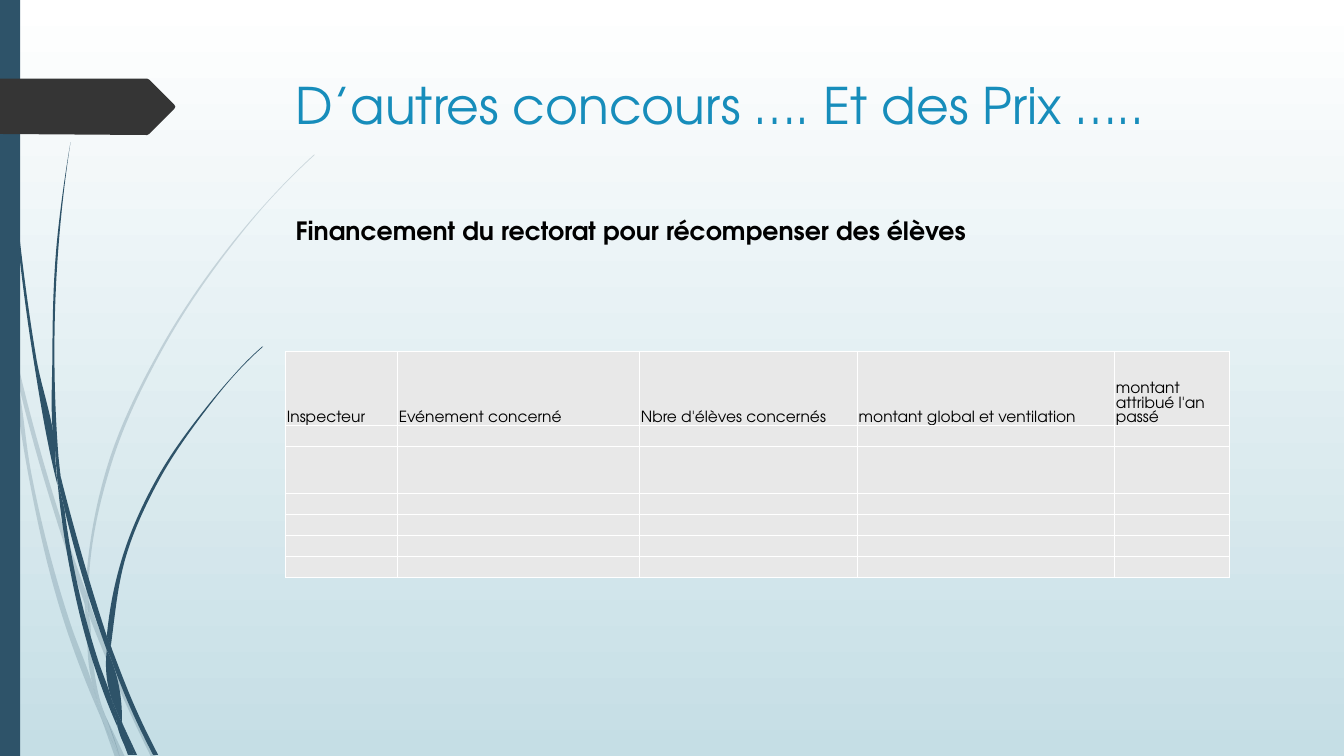
from dataclasses import dataclass

from lxml.etree import SubElement
from pptx import Presentation
from pptx.dml.color import RGBColor
from pptx.enum.shapes import MSO_SHAPE
from pptx.enum.text import MSO_ANCHOR, MSO_AUTO_SIZE, PP_ALIGN
from pptx.oxml.ns import qn
from pptx.util import Cm, Pt


@dataclass(frozen=True)
class Theme:
    font: str = "TeX Gyre Adventor"
    title: str = "178DBB"
    text: str = "000000"
    stem: str = "2E5369"
    arrow: str = "353535"
    cell: str = "E8E8E8"
    border: str = "FFFFFF"
    sky_top: str = "FFFFFF"
    sky_bottom: str = "C5DEE5"
    title_size: int = 36
    subtitle_size: int = 18
    table_size: int = 11


THEME = Theme()
GRID = Cm(2.54) / 100  # outline points are counted in this unit
PALE_ALPHA = 20

# Each blade: the points along one edge, then those back along the other.
PALE_BLADES = [
    ([(0, 282), (9, 322), (11, 350)], [(10, 344), (0, 299)]),
    ([(14, 345), (36, 433), (62, 520), (85, 586)], [(84, 599), (58, 522), (36, 449), (17, 376)]),
    ([(88, 596), (92, 607), (127, 692), (155, 751)], [(150, 751), (123, 694), (88, 610)]),
    ([(105, 711), (124, 751)], [(119, 751)]),
    ([(11, 350), (17, 376), (31, 469), (70, 619), (93, 683), (99, 707), (101, 714)],
     [(92, 693), (65, 621), (28, 470), (11, 350)]),
    ([(84, 599), (88, 610), (91, 646), (103, 706), (105, 711)], [(96, 692), (93, 683), (87, 646)]),
    ([(312, 153), (289, 175), (268, 197), (228, 244), (158, 348), (107, 461), (85, 584)],
     [(88, 596), (88, 584), (110, 462), (160, 349), (229, 245), (268, 198), (290, 175), (312, 154)]),
    ([(101, 714), (119, 751)], [(114, 751)]),
    ([(85, 586), (88, 596), (88, 610)], [(88, 608), (84, 599)]),
    ([(93, 683), (96, 692), (105, 711), (119, 751)], [(101, 714), (99, 707)]),
]
DARK_BLADES = [
    ([(3, 0), (4, 48), (7, 110), (17, 233), (33, 355), (56, 477), (57, 481)],
     [(55, 457), (55, 453), (36, 355), (19, 232), (8, 109), (5, 48), (4, 0)]),
    ([(60, 472), (93, 590), (106, 631)], [(106, 645), (88, 592), (64, 505)]),
    ([(110, 641), (113, 649), (136, 706), (157, 749)], [(152, 749), (132, 708), (111, 656)]),
    ([(57, 477), (68, 557), (93, 659), (111, 708), (117, 722)],
     [(116, 717), (110, 691), (98, 657), (72, 556), (64, 505)]),
    ([(70, 141), (62, 193), (56, 245), (52, 349), (55, 449), (60, 472)],
     [(58, 453), (54, 349), (58, 245), (63, 193), (70, 141)]),
    ([(122, 719), (136, 749)], [(133, 749)]),
    ([(55, 449), (60, 472), (64, 505)], [(57, 477), (55, 453)]),
    ([(260, 344), (245, 358), (231, 373), (204, 405), (156, 474), (122, 551), (106, 631)],
     [(110, 641), (111, 633), (125, 552), (158, 476), (205, 406), (231, 374), (245, 359), (261, 344)]),
    ([(117, 722), (131, 749)], [(127, 749)]),
    ([(106, 645), (110, 691), (116, 706), (122, 719)], [(121, 716), (111, 656), (109, 651)]),
    ([(106, 631), (110, 641), (111, 656)], [(109, 651), (106, 645)]),
    ([(110, 691), (116, 706), (122, 719), (133, 749)], [(130, 749), (117, 722), (116, 717)]),
]
ARROW = [(0, 78), (146, 78), (148, 79), (173, 104), (174, 106),
         (173, 108), (148, 133), (146, 134), (0, 133)]

HEADINGS = ["Inspecteur", "Evénement concerné", "Nbre d'élèves concernés",
            "montant global et ventilation", "montant attribué l'an passé"]
COLUMN_WIDTHS = [2.82, 6.1, 5.49, 6.48, 2.9]
ROW_HEIGHTS = [1.88, 0.53, 1.17] + [0.53] * 4


def color(name):
    return RGBColor.from_string(name)


def curve_handles(edge):
    """Return the two Bezier handles of every step of a smooth edge."""
    points = [complex(x, y) for x, y in edge]
    chords = [b - a for a, b in zip(points, points[1:])]
    if len(chords) < 2:
        return [None] * len(chords)
    slopes = [chord / abs(chord) for chord in chords]
    inner = [(s * abs(d) + t * abs(c)) / (abs(c) + abs(d))
             for s, t, c, d in zip(slopes, slopes[1:], chords, chords[1:])]
    tangents = [2 * slopes[0] - inner[0], *inner, 2 * slopes[-1] - inner[-1]]
    return [(points[i] + tangents[i] * abs(chord) / 3,
             points[i + 1] - tangents[i + 1] * abs(chord) / 3)
            for i, chord in enumerate(chords)]


def paint(shape, fill, alpha=None):
    shape.shadow.inherit = False
    shape.line.fill.background()
    shape.fill.solid()
    shape.fill.fore_color.rgb = color(fill)
    if alpha is not None:
        rgb = shape.fill._xPr.find(qn("a:solidFill"))[0]
        SubElement(rgb, qn("a:alpha"), val=str(alpha * 1000))


def add_outline(slide, points, fill, alpha=None):
    start, *others = [(x * GRID, y * GRID) for x, y in points]
    builder = slide.shapes.build_freeform(*start, scale=1.0)
    builder.add_line_segments(others, close=True)
    shape = builder.convert_to_shape()
    paint(shape, fill, alpha)
    return shape


def add_blade(slide, edge, back, alpha):
    shape = add_outline(slide, edge + back, THEME.stem, alpha)
    steps = list(shape._element.iter(qn("a:lnTo")))
    handles = curve_handles(edge) + [None] + curve_handles(back)
    for step, pair in zip(steps, handles):
        if pair is None:
            continue
        step.tag = qn("a:cubicBezTo")
        for index, handle in enumerate(pair):
            point = SubElement(step, qn("a:pt"), x=str(round(handle.real * GRID - shape.left)),
                               y=str(round(handle.imag * GRID - shape.top)))
            step.insert(index, point)


def write(text_frame, text, *, size, fill=THEME.text, bold=False):
    paragraph = text_frame.paragraphs[0]
    paragraph.alignment = PP_ALIGN.LEFT
    run = paragraph.add_run()
    run.text = text
    run.font.name = THEME.font
    run.font.size = Pt(size)
    run.font.bold = bold
    run.font.color.rgb = color(fill)


def set_background(slide):
    fill = slide.background.fill
    fill.gradient()
    fill.gradient_angle = 270
    for stop, name in zip(fill.gradient_stops, (THEME.sky_top, THEME.sky_bottom)):
        stop.color.rgb = color(name)


def add_decoration(slide, height):
    for blades, alpha in ((PALE_BLADES, PALE_ALPHA), (DARK_BLADES, None)):
        for edge, back in blades:
            add_blade(slide, edge, back, alpha)
    band = slide.shapes.add_shape(MSO_SHAPE.RECTANGLE, 0, 0, Cm(0.51), height)
    paint(band, THEME.stem)
    add_outline(slide, ARROW, THEME.arrow)


def set_title(slide, text):
    title = slide.shapes.title
    title.left, title.top, title.width, title.height = Cm(7.2), Cm(1.73), Cm(24.77), Cm(3.56)
    title.text_frame.auto_size = MSO_AUTO_SIZE.NONE
    title.text_frame.vertical_anchor = MSO_ANCHOR.TOP
    write(title.text_frame, text, size=THEME.title_size, fill=THEME.title)


def add_subtitle(slide, text):
    box = slide.shapes.add_textbox(Cm(7.2), Cm(5.3), Cm(17.73), Cm(1.02))
    box.text_frame.word_wrap = False
    box.text_frame.auto_size = MSO_AUTO_SIZE.SHAPE_TO_FIT_TEXT
    write(box.text_frame, text, size=THEME.subtitle_size, bold=True)


def format_cell(cell):
    cell.margin_left = cell.margin_right = cell.margin_top = Cm(0.03)
    cell.margin_bottom = 0
    cell.vertical_anchor = MSO_ANCHOR.BOTTOM
    properties = cell._tc.get_or_add_tcPr()
    for side in ("lnL", "lnR", "lnT", "lnB"):
        line = SubElement(properties, qn(f"a:{side}"), w=str(Pt(1)))
        SubElement(SubElement(line, qn("a:solidFill")), qn("a:srgbClr"), val=THEME.border)
    cell.fill.solid()
    cell.fill.fore_color.rgb = color(THEME.cell)


def add_prize_table(slide):
    table = slide.shapes.add_table(
        len(ROW_HEIGHTS), len(COLUMN_WIDTHS), Cm(7.2), Cm(8.85),
        Cm(sum(COLUMN_WIDTHS)), Cm(sum(ROW_HEIGHTS))).table
    table.first_row = table.horz_banding = False
    for column, width in zip(table.columns, COLUMN_WIDTHS):
        column.width = Cm(width)
    for row, height in zip(table.rows, ROW_HEIGHTS):
        row.height = Cm(height)
    for cell in table.iter_cells():
        format_cell(cell)
        end = SubElement(cell.text_frame.paragraphs[0]._p, qn("a:endParaRPr"))
        end.set("sz", str(THEME.table_size * 100))
    for cell, heading in zip(table.rows[0].cells, HEADINGS):
        write(cell.text_frame, heading, size=THEME.table_size)


def main():
    presentation = Presentation()
    presentation.slide_width, presentation.slide_height = Cm(33.87), Cm(19.05)
    slide = presentation.slides.add_slide(presentation.slide_layouts[5])
    set_background(slide)
    add_decoration(slide, presentation.slide_height)
    set_title(slide, "D’autres concours …. Et des Prix …..")
    add_prize_table(slide)
    add_subtitle(slide, "Financement du rectorat pour récompenser des élèves")
    presentation.save("out.pptx")


if __name__ == "__main__":
    main()
